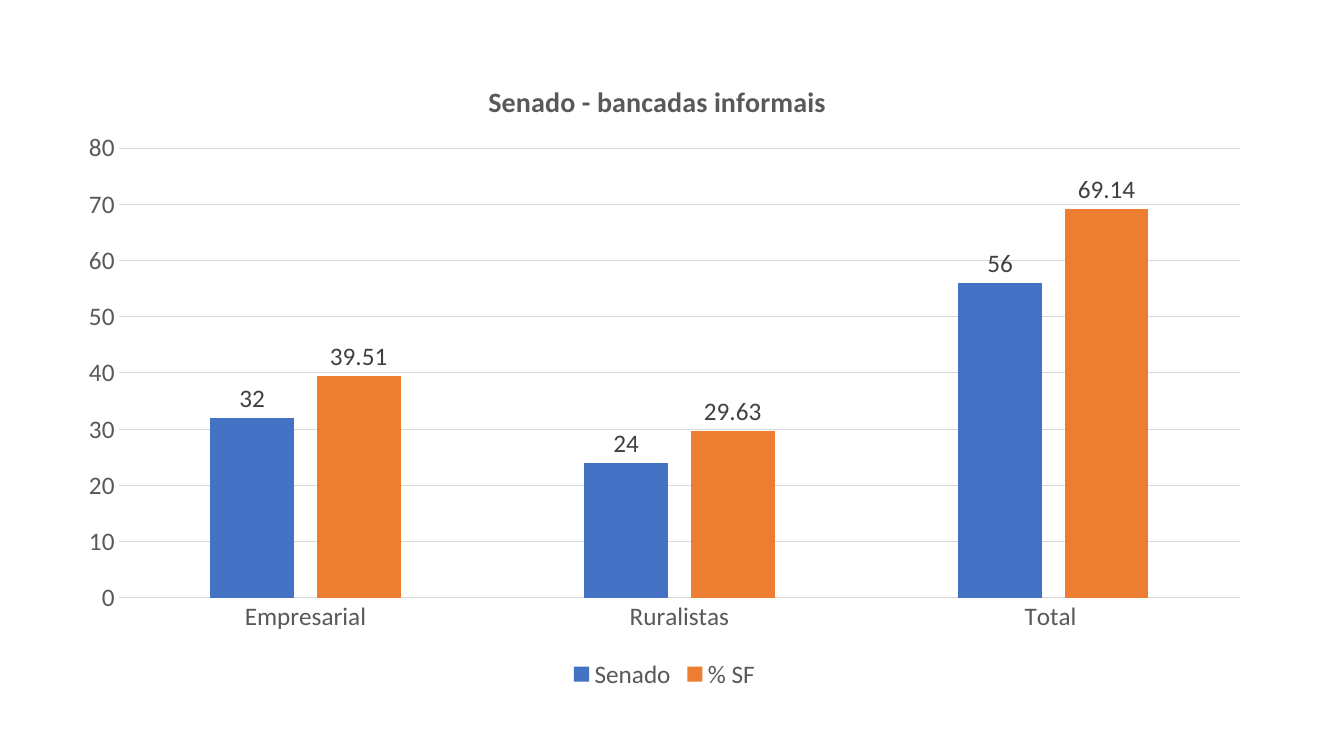
from lxml import etree
from pptx import Presentation
from pptx.chart.data import CategoryChartData
from pptx.dml.color import RGBColor
from pptx.enum.chart import XL_CHART_TYPE as ChartType
from pptx.enum.chart import XL_LABEL_POSITION as LabelPosition
from pptx.enum.chart import XL_LEGEND_POSITION as LegendPosition
from pptx.enum.chart import XL_TICK_MARK as TickMark
from pptx.oxml.ns import qn
from pptx.util import Inches, Pt

# Content
TITLE = "Senado - bancadas informais"
CAUCUSES = ["Empresarial", "Ruralistas", "Total "]
# name, values, colour, number format
SERIES = [
    ("Senado", (32, 24, 56), "4472C4", "General"),
    ("% SF", (39.51, 29.63, 69.14), "ED7D31", "0.00"),
]


def rgb(code):
    return RGBColor.from_string(code)


def place(parent, index, **fractions):
    """Pin a chart part at fractions of the chart area."""
    for automatic in parent.findall(qn("c:layout")):
        parent.remove(automatic)
    layout = etree.Element(qn("c:layout"))
    manual = etree.SubElement(layout, qn("c:manualLayout"))
    if "w" in fractions:
        etree.SubElement(manual, qn("c:layoutTarget"), val="inner")
    for side in ("x", "y"):
        etree.SubElement(manual, qn(f"c:{side}Mode"), val="edge")
    for side, value in fractions.items():
        etree.SubElement(manual, qn(f"c:{side}"), val=str(value))
    parent.insert(index, layout)


class ChartSlide:
    FONT = "Calibri"
    TEXT = "595959"
    LABEL = "404040"
    RULE = "D9D9D9"

    def __init__(self, prs):
        self.slide = prs.slides.add_slide(prs.slide_layouts[6])

    def style(self, font, color=TEXT, size=18, bold=False):
        font.name = self.FONT
        font.size = Pt(size)
        font.bold = bold
        font.color.rgb = rgb(color)

    def rule(self, line):
        line.color.rgb = rgb(self.RULE)
        line.width = Pt(0.75)

    def columns(self, left, top, width, height):
        figures = CategoryChartData()
        figures.categories = CAUCUSES
        for name, values, _, number_format in SERIES:
            figures.add_series(name, values, number_format)
        chart = self.slide.shapes.add_chart(
            ChartType.COLUMN_CLUSTERED, Inches(left), Inches(top),
            Inches(width), Inches(height), figures).chart
        self.style(chart.font, "000000")
        plot = chart.plots[0]
        plot.gap_width = 219
        plot.overlap = -27
        plot.vary_by_categories = False
        for series, (_, _, color, number_format) in zip(plot.series, SERIES):
            series.format.fill.solid()
            series.format.fill.fore_color.rgb = rgb(color)
            series.invert_if_negative = False
            self.labels(series.data_labels, number_format)
        return chart

    def labels(self, labels, number_format):
        labels.show_value = True
        labels.position = LabelPosition.OUTSIDE_END
        labels.number_format = number_format
        labels.number_format_is_linked = False
        self.style(labels.font, self.LABEL)

    def title(self, chart, text):
        run = chart.chart_title.text_frame.paragraphs[0].add_run()
        run.text = text
        self.style(run.font, size=20, bold=True)
        chart.chart_title.include_in_layout = False

    def axes(self, chart):
        for axis in (chart.category_axis, chart.value_axis):
            axis.major_tick_mark = axis.minor_tick_mark = TickMark.NONE
            self.style(axis.tick_labels.font)
        self.rule(chart.category_axis.format.line)
        values = chart.value_axis
        values.format.line.fill.background()
        values.minimum_scale, values.maximum_scale = 0, 80
        values.major_unit = 10
        values.tick_labels.number_format = "General"
        values.tick_labels.number_format_is_linked = False
        self.rule(values.major_gridlines.format.line)

    def legend(self, chart):
        chart.has_legend = True
        chart.legend.position = LegendPosition.BOTTOM
        chart.legend.include_in_layout = False
        self.style(chart.legend.font)


def main():
    prs = Presentation()
    prs.slide_width, prs.slide_height = Inches(13.33), Inches(7.5)

    # Caucus sizes, in seats and as a share of the Senate
    senate = ChartSlide(prs)
    chart = senate.columns(0.64, 0.46, 11.9, 6.43)
    senate.title(chart, TITLE)
    senate.axes(chart)
    senate.legend(chart)

    # Positions inside the chart
    plot_area = chart.element.find(".//" + qn("c:plotArea"))
    place(plot_area, 0, x=0.045, y=0.157, w=0.935, h=0.694)
    place(chart.element.find(".//" + qn("c:title")), 1, x=0.349, y=0.047)

    prs.save("out.pptx")


if __name__ == "__main__":
    main()
